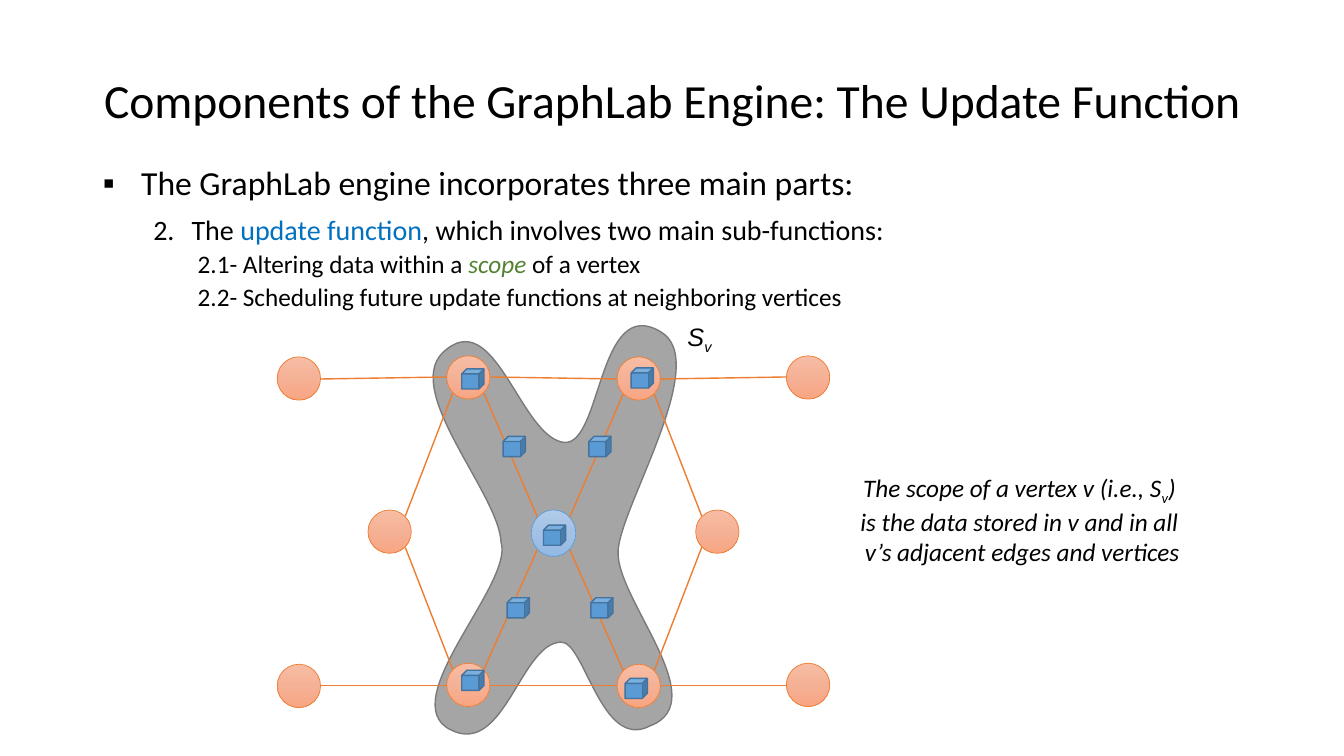
"""Build the slide on the GraphLab update function and the scope of a vertex."""
from copy import deepcopy
from dataclasses import dataclass
from itertools import pairwise
from math import sqrt

from lxml.etree import SubElement
from pptx import Presentation
from pptx.dml.color import RGBColor
from pptx.enum.shapes import MSO_CONNECTOR, MSO_SHAPE
from pptx.enum.text import MSO_ANCHOR, MSO_AUTO_SIZE, PP_ALIGN
from pptx.oxml.ns import qn
from pptx.util import Pt

PX = 9144
COLORS = {
    "text": "000000", "function": "0070C0", "scope": "548235",
    "region": "A5A5A5", "region_line": "7A7A7A", "edge": "ED7D31",
    "hub_line": "5B9BD5", "cube": "5B9BD5", "cube_line": "43739E",
}
ORANGE = ("F7BDA5", "F5B196", "F8A582")
BLUE = ("B1CBE9", "A3C1E5", "93B9E4")


@dataclass(frozen=True)
class Vertex:
    x: int
    y: int
    w: int = 43
    h: int = 43
    shades: tuple = ORANGE
    line: str = "edge"

    def site(self, other):
        """Return the point on the outline that faces another vertex."""
        dx = 1 if other.x > self.x else -1
        dy = other.y - self.y
        cx, cy = self.x + self.w / 2, self.y + self.h / 2
        if abs(dy) < self.h:
            return round(cx + dx * self.w / 2), round(cy)
        side = 1 if dy > 0 else -1
        reach = sqrt(0.5) / 2
        return round(cx + dx * self.w * reach), round(cy + side * self.h * reach)


@dataclass(frozen=True)
class Line:
    runs: tuple
    size: int
    level: int
    margin: int
    indent: int = 0
    before: float = 3.8
    after: float = 0
    bullet: tuple = ("a:buNone", {})


TOP = [Vertex(x, y) for x, y in ((275, 354), (443, 353), (612, 354), (780, 353))]
BOTTOM = [Vertex(v.x, v.y + 305) for v in TOP]
LEFT, RIGHT = Vertex(365, 506), Vertex(690, 506)
HUB = Vertex(527, 506, 44, 46, BLUE, "hub_line")
EDGES = [*pairwise(TOP), *pairwise(BOTTOM)] + [
    (middle, row[i])
    for middle, ends in ((LEFT, (1,)), (HUB, (1, 2)), (RIGHT, (2,)))
    for row in (TOP, BOTTOM)
    for i in ends
]
CUBES = [(458, 366), (626, 365), (539, 521), (458, 665), (620, 673),
         (584, 433), (499, 433), (586, 593), (503, 593)]
REGION = [
    (560, 439),
    (597, 441), (593, 292), (655, 329), (707, 358), (613, 506), (613, 548),
    (612, 595), (708, 696), (645, 720), (596, 746), (580, 635), (556, 637),
    (516, 639), (500, 751), (447, 724), (390, 696), (510, 579), (497, 538),
    (495, 490), (400, 389), (439, 350), (491, 300), (516, 435), (560, 439),
]
LINES = [
    Line((("The GraphLab engine incorporates three main parts:", {}),),
         24, 1, 38, -38, 0, 6, ("a:buChar", {"char": "▪"})),
    Line((("The ", {}), ("update function", {"color": "function"}),
          (", which involves two main sub-functions:", {})),
         20, 1, 88, -38,
         bullet=("a:buAutoNum", {"type": "arabicPeriod", "startAt": "2"})),
    Line((("2.1- Altering data within a ", {}),
          ("scope", {"color": "scope", "italic": True}),
          (" of a vertex", {})), 18, 2, 94),
    Line((("2.2- Scheduling future update functions at neighboring vertices", {}),),
         18, 2, 94),
]


def rgb(value: str) -> RGBColor:
    """Turn a hex string into a colour."""
    return RGBColor.from_string(value)


def box(*lengths: int) -> list:
    """Scale px lengths to EMU."""
    return [n * PX for n in lengths]


def place(s, x: int, y: int, w: int, h: int) -> None:
    """Move and size a shape."""
    s.left, s.top, s.width, s.height = box(x, y, w, h)


def write(p, text: str, *, size: int = 18, color: str = "text",
          font: str = "Calibri", italic: bool = False, baseline: int = 0) -> None:
    """Add one formatted run to a paragraph."""
    r = p.add_run()
    r.text = text
    r.font.size, r.font.name, r.font.italic = Pt(size), font, italic
    r.font.bold = False
    r.font.color.rgb = rgb(COLORS[color])
    if baseline:
        r.font._element.set("baseline", str(baseline * 1000))


def outline(s, color: str, width: float) -> None:
    """Set the line of a shape or connector."""
    s.line.color.rgb = rgb(COLORS[color])
    s.line.width = Pt(width)


def paint(s, fill: str, line: str) -> None:
    """Give a shape a plain fill and a line."""
    s.shadow.inherit = False
    s.fill.solid()
    s.fill.fore_color.rgb = rgb(COLORS[fill])
    outline(s, line, 1)


def add_body(s) -> None:
    """Fill the body placeholder with its list."""
    place(s, 92, 160, 1130, 500)
    tf = s.text_frame
    tf.auto_size = MSO_AUTO_SIZE.NONE
    for i, line in enumerate(LINES):
        p = tf.add_paragraph() if i else tf.paragraphs[0]
        p.level, p.alignment, p.line_spacing = line.level, PP_ALIGN.JUSTIFY, 0.9
        p.space_before, p.space_after = Pt(line.before), Pt(line.after)
        pPr = p._p.get_or_add_pPr()
        pPr.set("marL", str(line.margin * PX))
        pPr.set("indent", str(line.indent * PX))
        tag, attributes = line.bullet
        SubElement(pPr, qn("a:buFont"), typeface="Arial")
        SubElement(pPr, qn(tag), attributes)
        for text, style in line.runs:
            write(p, text, size=line.size, **style)


def add_region(shapes) -> None:
    """Draw the curved scope, three points to each curve."""
    builder = shapes.build_freeform(*REGION[0], scale=PX)
    builder.add_line_segments(REGION[1:], close=True)
    s = builder.convert_to_shape()
    paint(s, "region", "region_line")
    segments = iter(s._element.findall(".//" + qn("a:lnTo")))
    for first, second, third in zip(segments, segments, segments):
        curve = SubElement(first.getparent(), qn("a:cubicBezTo"))
        first.addprevious(curve)
        for segment in (first, second, third):
            curve.append(segment[0])
            segment.getparent().remove(segment)


def add_vertex(shapes, v: Vertex) -> None:
    """Draw a vertex with a three-stop gradient."""
    s = shapes.add_shape(MSO_SHAPE.OVAL, *box(v.x, v.y, v.w, v.h))
    s.shadow.inherit = False
    s.fill.gradient()
    s.fill.gradient_angle = 270
    stops = s._element.find(".//" + qn("a:gsLst"))
    stops.append(deepcopy(stops[0]))
    for i, (stop, shade) in enumerate(zip(s.fill.gradient_stops, v.shades)):
        stop.color.rgb = rgb(shade)
        stop.position = i / 2
    outline(s, v.line, 0.5)


def add_edge(shapes, a: Vertex, b: Vertex) -> None:
    """Join two vertices with a straight line."""
    s = shapes.add_connector(MSO_CONNECTOR.STRAIGHT, *box(*a.site(b), *b.site(a)))
    outline(s, "edge", 1)
    SubElement(s._element.spPr, qn("a:effectLst"))


def add_captions(shapes) -> None:
    """Add the scope symbol and its explanation."""
    tf = shapes.add_textbox(*box(672, 314, 56, 40)).text_frame
    tf.auto_size = MSO_AUTO_SIZE.SHAPE_TO_FIT_TEXT
    p = tf.paragraphs[0]
    write(p, "S", font="Arial", italic=True)
    write(p, "v", font="Arial", italic=True, baseline=-25)

    s = shapes.add_shape(MSO_SHAPE.ROUNDED_RECTANGLE, *box(801, 457, 426, 128))
    s.shadow.inherit = False
    s.fill.background()
    s.line.fill.background()
    s.text_frame.vertical_anchor = MSO_ANCHOR.TOP
    p = s.text_frame.paragraphs[0]
    p.alignment = PP_ALIGN.CENTER
    write(p, "The scope of a vertex v (i.e., S", italic=True)
    write(p, "v", italic=True, baseline=-25)
    write(p, ") ", italic=True)
    for text in ("is the data stored in v and in all ", "v’s adjacent edges and vertices"):
        p.add_line_break()
        write(p, text, italic=True)


def main() -> None:
    """Build and save the slide."""
    prs = Presentation()
    prs.slide_width, prs.slide_height = box(1333, 750)
    slide = prs.slides.add_slide(prs.slide_layouts[1])
    shapes = slide.shapes
    place(shapes.title, 92, 30, 1150, 145)
    tf = shapes.title.text_frame
    tf.auto_size, tf.vertical_anchor = MSO_AUTO_SIZE.NONE, MSO_ANCHOR.MIDDLE
    p = tf.paragraphs[0]
    p.alignment, p.line_spacing = PP_ALIGN.CENTER, 0.9
    write(p, "Components of the GraphLab Engine: The Update Function", size=34)
    add_body(slide.placeholders[1])
    add_region(shapes)
    graph = shapes.add_group_shape().shapes
    for v in (LEFT, RIGHT, *BOTTOM, *TOP):
        add_vertex(graph, v)
    for a, b in EDGES:
        add_edge(graph, a, b)
    add_vertex(shapes, HUB)
    data = shapes.add_group_shape().shapes
    for x, y in CUBES:
        paint(data.add_shape(MSO_SHAPE.CUBE, *box(x, y, 22, 20)), "cube", "cube_line")
    add_captions(shapes)
    prs.save("out.pptx")


if __name__ == "__main__":
    main()
